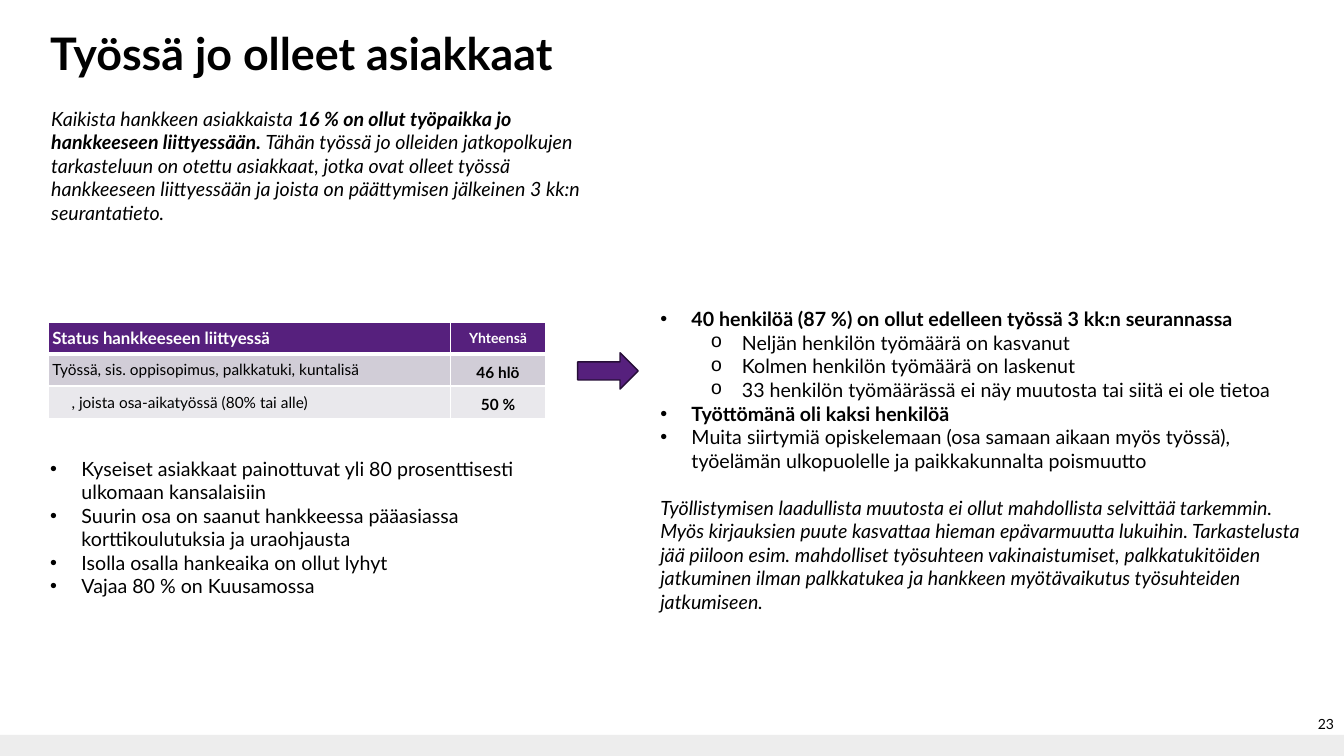
import lxml.etree
import pptx
import pptx.dml.color
import pptx.enum.shapes
import pptx.enum.text
import pptx.oxml.ns
import pptx.util

Inches = pptx.util.Inches
Pt = pptx.util.Pt
qn = pptx.oxml.ns.qn
ALIGN = pptx.enum.text.PP_ALIGN
ANCHOR = pptx.enum.text.MSO_ANCHOR
RECTANGLE = pptx.enum.shapes.MSO_SHAPE.RECTANGLE
RIGHT_ARROW = pptx.enum.shapes.MSO_SHAPE.RIGHT_ARROW

FONT = "Lato"
PURPLE = "56207D"
BLACK = "000000"
WHITE = "FFFFFF"
BULLETS = [("•", "Arial", 0.31), ("o", "Courier New", 0.81)]

CLIENT_NOTES = [
    "Kyseiset asiakkaat painottuvat yli 80 prosenttisesti ulkomaan kansalaisiin",
    "Suurin osa on saanut hankkeessa pääasiassa korttikoulutuksia ja uraohjausta",
    "Isolla osalla hankeaika on ollut lyhyt",
    "Vajaa 80 % on Kuusamossa",
]
INTRO = [
    ("Kaikista hankkeen asiakkaista ", False),
    ("16 % on ollut työpaikka jo hankkeeseen liittyessään. ", True),
    ("Tähän työssä jo olleiden jatkopolkujen tarkasteluun on otettu asiakkaat, "
     "jotka ovat olleet työssä hankkeeseen liittyessään ja joista on päättymisen "
     "jälkeinen 3 kk:n seurantatieto.", False),
]
OUTCOMES = [
    (0, "40 henkilöä (87 %) on ollut edelleen työssä 3 kk:n seurannassa", True),
    (1, "Neljän henkilön työmäärä on kasvanut", False),
    (1, "Kolmen henkilön työmäärä on laskenut", False),
    (1, "33 henkilön työmäärässä ei näy muutosta tai siitä ei ole tietoa", False),
    (0, "Työttömänä oli kaksi henkilöä", True),
    (0, "Muita siirtymiä opiskelemaan (osa samaan aikaan myös työssä), "
        "työelämän ulkopuolelle ja paikkakunnalta poismuutto", False),
]
CAVEAT = (
    "Työllistymisen laadullista muutosta ei ollut mahdollista selvittää tarkemmin. "
    "Myös kirjauksien puute kasvattaa hieman epävarmuutta lukuihin. Tarkastelusta "
    "jää piiloon esim. mahdolliset työsuhteen vakinaistumiset, palkkatukitöiden "
    "jatkuminen ilman palkkatukea ja hankkeen myötävaikutus työsuhteiden jatkumiseen."
)
STATUS_ROWS = [
    ("Status hankkeeseen liittyessä", "Yhteensä", PURPLE),
    ("Työssä, sis. oppisopimus, palkkatuki, kuntalisä", "46 hlö", "D1CDD7"),
    (", joista osa-aikatyössä (80% tai alle)", "50 %", "E9E8EC"),
]


def rgb(value):
    return pptx.dml.color.RGBColor.from_string(value)


def style(font, size, color=BLACK, bold=False, italic=False):
    font.name = FONT
    font.size = Pt(size)
    font.color.rgb = rgb(color)
    font.bold = bold
    font.italic = italic


def write(paragraph, runs, size, italic=False):
    for text, bold in runs:
        run = paragraph.add_run()
        run.text = text
        style(run.font, size, bold=bold, italic=italic)


def add_text(slide, left, top, width, height):
    frame = slide.shapes.add_textbox(
        Inches(left), Inches(top), Inches(width), Inches(height)).text_frame
    frame.word_wrap = True
    return frame


def add_bullets(frame, items):
    for index, (level, text, bold) in enumerate(items):
        paragraph = frame.add_paragraph() if index else frame.paragraphs[0]
        paragraph.level = level
        symbol, symbol_font, indent = BULLETS[level]
        properties = paragraph._p.get_or_add_pPr()
        properties.set("marL", str(Inches(indent)))
        properties.set("indent", str(Inches(-0.31)))
        lxml.etree.SubElement(properties, qn("a:buFont"), typeface=symbol_font)
        lxml.etree.SubElement(properties, qn("a:buChar"), char=symbol)
        write(paragraph, [(text, bold)], 14)


def add_block(slide, kind, left, top, width, height, fill, line=None):
    block = slide.shapes.add_shape(
        kind, Inches(left), Inches(top), Inches(width), Inches(height))
    block.shadow.inherit = False
    block.fill.solid()
    block.fill.fore_color.rgb = rgb(fill)
    if line:
        block.line.color.rgb = rgb(line)
        block.line.width = Pt(1)
    else:
        block.line.fill.background()


def set_borders(cell, bottom, top):
    properties = cell._tc.get_or_add_tcPr()
    widths = [("L", 1), ("R", 1), ("T", top), ("B", bottom)]
    for position, (side, width) in enumerate(widths):
        border = lxml.etree.Element(qn("a:ln" + side), w=str(Pt(width)))
        fill = lxml.etree.SubElement(border, qn("a:solidFill"))
        lxml.etree.SubElement(fill, qn("a:srgbClr"), val=WHITE)
        properties.insert(position, border)


def add_status_table(slide):
    table = slide.shapes.add_table(
        3, 2, Inches(0.48), Inches(3.2), Inches(4.93), Inches(0.95)).table
    for column, width in zip(table.columns, (3.99, 0.94)):
        column.width = Inches(width)
    for row, height in zip(table.rows, (0.31, 0.32, 0.32)):
        row.height = Inches(height)
    for r, (status, total, fill) in enumerate(STATUS_ROWS):
        header = r == 0
        for c, text in enumerate((status, total)):
            cell = table.cell(r, c)
            cell.vertical_anchor = ANCHOR.MIDDLE
            cell.margin_left = cell.margin_right = Inches(0.02 if header and c else 0.04)
            cell.margin_top = cell.margin_bottom = Inches(0.01)
            cell.fill.solid()
            cell.fill.fore_color.rgb = rgb(fill)
            set_borders(cell, 3 if header else 1, 3 if r == 1 else 1)
            paragraph = cell.text_frame.paragraphs[0]
            paragraph.text = text
            if c:
                paragraph.alignment = ALIGN.CENTER
                if not header:
                    paragraph.line_spacing = 1.25
                    paragraph.space_after = Pt(10)
            size = (10 if c else 12) if header else 11
            style(paragraph.runs[0].font, size, WHITE if header else BLACK,
                  bold=header or c == 1)
    part_time = table.cell(2, 0).text_frame.paragraphs[0]
    part_time._p.get_or_add_pPr().set("marL", str(Inches(0.19)))


def main():
    presentation = pptx.Presentation()
    presentation.slide_width = Inches(13.33)
    presentation.slide_height = Inches(7.5)
    slide = presentation.slides.add_slide(presentation.slide_layouts[6])

    add_block(slide, RECTANGLE, 0, 7.29, 13.33, 0.21, "EDEDED")

    title = add_text(slide, 0.4, 0.21, 12.13, 0.8)
    write(title.paragraphs[0], [("Työssä jo olleet asiakkaat", True)], 32)

    page_number = add_text(slide, 12.73, 6.98, 0.6, 0.4)
    page_number.vertical_anchor = ANCHOR.MIDDLE
    page_number.paragraphs[0].alignment = ALIGN.RIGHT
    write(page_number.paragraphs[0], [("23", False)], 10)

    add_status_table(slide)
    add_block(slide, RIGHT_ARROW, 5.73, 3.5, 0.6, 0.36, PURPLE, "260E37")

    client_notes = add_text(slide, 0.4, 4.48, 5.14, 1.51)
    add_bullets(client_notes, [(0, note, False) for note in CLIENT_NOTES])

    intro = add_text(slide, 0.41, 1.01, 5.77, 1.44)
    write(intro.paragraphs[0], INTRO, 14, italic=True)

    outcomes = add_text(slide, 6.45, 3, 6.58, 3.4)
    add_bullets(outcomes, OUTCOMES)
    caveat = outcomes.add_paragraph()
    caveat.space_before = Pt(16.8)
    write(caveat, [(CAVEAT, False)], 14, italic=True)

    presentation.save("out.pptx")


if __name__ == "__main__":
    main()
